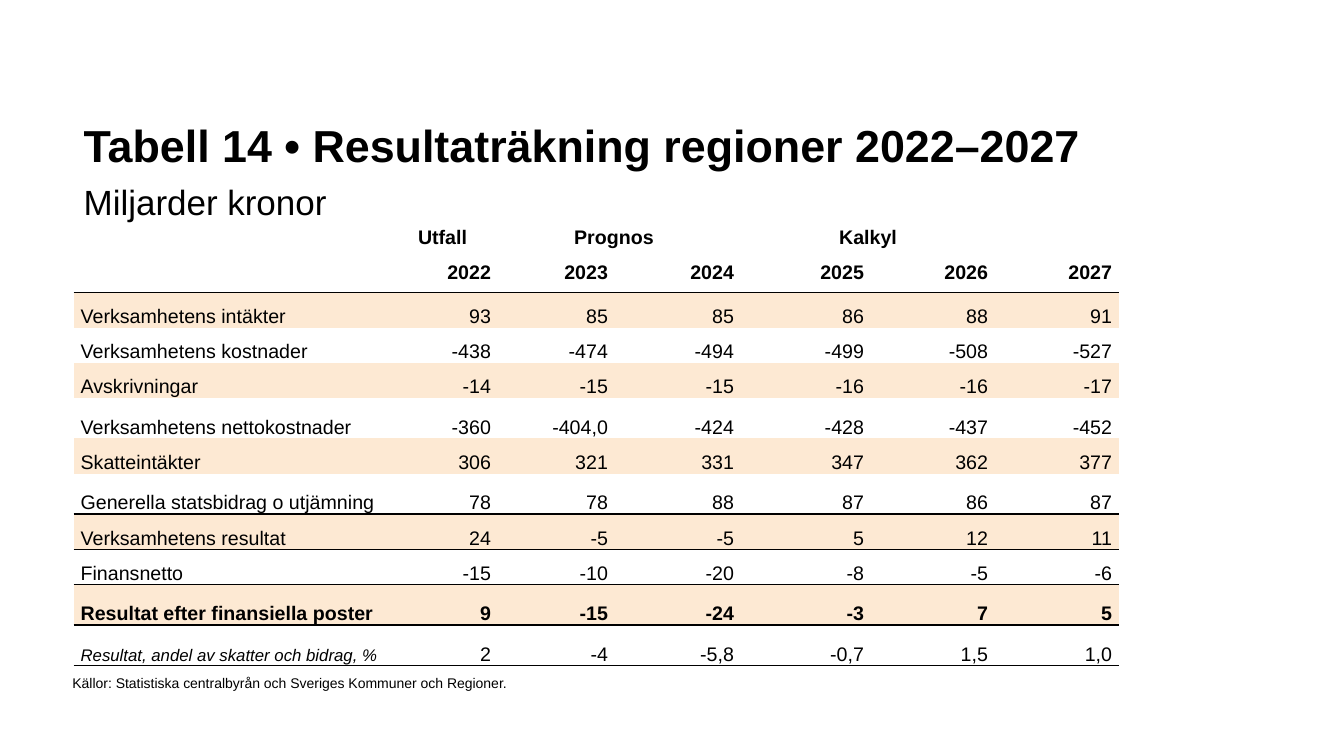
import pptx
import pptx.util
import pptx.dml.color
import pptx.enum.text
import pptx.oxml
import pptx.oxml.ns

Inches, Pt = pptx.util.Inches, pptx.util.Pt
Align, Anchor = pptx.enum.text.PP_ALIGN, pptx.enum.text.MSO_ANCHOR
BLACK = pptx.dml.color.RGBColor(0, 0, 0)
PEACH = pptx.dml.color.RGBColor(0xFD, 0xE9, 0xD3)
PLAIN = "{2D5ABB26-0587-4C30-8999-92F81FD0307C}"  # table style without grid

WIDTHS = [3.11, 1.1, 1.16, 1.25, 1.29, 1.23, 1.23]
HEADS = [
    ["", "Utfall", "Prognos", "", "Kalkyl", "", ""],
    ["", "2022", "2023", "2024", "2025", "2026", "2027"],
]
ITEMS = [
    ("Verksamhetens intäkter", "93 85 85 86 88 91"),
    ("Verksamhetens kostnader", "-438 -474 -494 -499 -508 -527"),
    ("Avskrivningar", "-14 -15 -15 -16 -16 -17"),
    ("Verksamhetens nettokostnader", "-360 -404,0 -424 -428 -437 -452"),
    ("Skatteintäkter", "306 321 331 347 362 377"),
    ("Generella statsbidrag o utjämning", "78 78 88 87 86 87"),
    ("Verksamhetens resultat", "24 -5 -5 5 12 11"),
    ("Finansnetto", "-15 -10 -20 -8 -5 -6"),
    ("Resultat efter finansiella poster", "9 -15 -24 -3 7 5"),
    ("Resultat, andel av skatter och bidrag, %", "2 -4 -5,8 -0,7 1,5 1,0"),
]
ROWS = HEADS + [[label, *values.split()] for label, values in ITEMS]
TALL = {5, 7, 10, 11}
RULED = {1, 7, 8, 9, 10, 11}
BOLD = {0, 1, 10}
LAST = len(ROWS) - 1


def apply(item, values):
    for name, value in values.items():
        setattr(item, name, value)


def style(font, size, bold=False, italic=False):
    apply(font, {"name": "Arial", "size": Pt(size), "bold": bold, "italic": italic})
    font.color.rgb = BLACK


def place(shape, left, top, width, height):
    apply(shape, {"left": Inches(left), "top": Inches(top),
                  "width": Inches(width), "height": Inches(height)})


def add_title(slide):
    title = slide.shapes.title
    place(title, 0.73, 0.96, 10.51, 1.35)
    apply(title.text_frame, {"word_wrap": True, "vertical_anchor": Anchor.MIDDLE,
                             "auto_size": pptx.enum.text.MSO_AUTO_SIZE.NONE})
    para = title.text_frame.paragraphs[0]
    apply(para, {"alignment": Align.LEFT, "line_spacing": 1.2, "space_after": Pt(4)})
    head = para.add_run()
    head.text = "Tabell 14 • Resultaträkning regioner 2022–2027"
    style(head.font, 32, bold=True)
    para.add_line_break()
    unit = para.add_run()
    unit.text = "Miljarder kronor"
    style(unit.font, 25)


def rule(cell):
    """Draw a thin black line along the bottom of the cell."""
    line = pptx.oxml.parse_xml(
        f'<a:lnB {pptx.oxml.ns.nsdecls("a")} w="12700"><a:solidFill>'
        f'<a:srgbClr val="{BLACK}"/></a:solidFill></a:lnB>')
    cell._tc.get_or_add_tcPr().insert(0, line)


def fill_cell(cell, text, row, col):
    apply(cell, {"margin_left": Inches(0.07), "margin_right": Inches(0.07),
                 "margin_top": 0, "margin_bottom": 0,
                 "vertical_anchor": Anchor.MIDDLE if row < 2 else Anchor.BOTTOM})
    if row >= 2 and row % 2 == 0:
        cell.fill.solid()
        cell.fill.fore_color.rgb = PEACH
    else:
        cell.fill.background()
    if row in RULED:
        rule(cell)
    para = cell.text_frame.paragraphs[0]
    align = Align.CENTER if row == 0 else Align.RIGHT if col else Align.LEFT
    apply(para, {"alignment": align, "line_spacing": Pt(13), "space_after": Pt(1)})
    if text:
        run = para.add_run()
        run.text = text
        note = row == LAST and col == 0
        style(run.font, 12 if note else 14, row in BOLD, note)


def add_grid(slide):
    frame = slide.shapes.add_table(len(ROWS), len(WIDTHS), Inches(0.73), Inches(2.2),
                                   Inches(sum(WIDTHS)), Inches(4.43))
    grid = frame.table
    apply(grid, {"first_row": False, "horz_banding": False})
    grid._tbl.tblPr.find(pptx.oxml.ns.qn("a:tableStyleId")).text = PLAIN
    for col, width in enumerate(WIDTHS):
        grid.columns[col].width = Inches(width)
    for row, texts in enumerate(ROWS):
        grid.rows[row].height = Inches(0.4 if row in TALL else 0.35)
        for col, text in enumerate(texts):
            fill_cell(grid.cell(row, col), text, row, col)
    for col in (2, 4):
        grid.cell(0, col).merge(grid.cell(0, col + 1))
    grid.cell(0, 2).margin_right = Inches(0.18)


def add_source(slide):
    box = slide.shapes.add_textbox(Inches(0.62), Inches(6.64), Inches(6.67), Inches(0.27))
    box.text_frame.word_wrap = True
    run = box.text_frame.paragraphs[0].add_run()
    run.text = "Källor: Statistiska centralbyrån och Sveriges Kommuner och Regioner."
    style(run.font, 10)


def main():
    deck = pptx.Presentation()
    apply(deck, {"slide_width": Inches(13.33), "slide_height": Inches(7.5)})
    slide = deck.slides.add_slide(deck.slide_layouts[5])
    add_title(slide)
    add_grid(slide)
    add_source(slide)
    deck.save("out.pptx")


if __name__ == "__main__":
    main()
